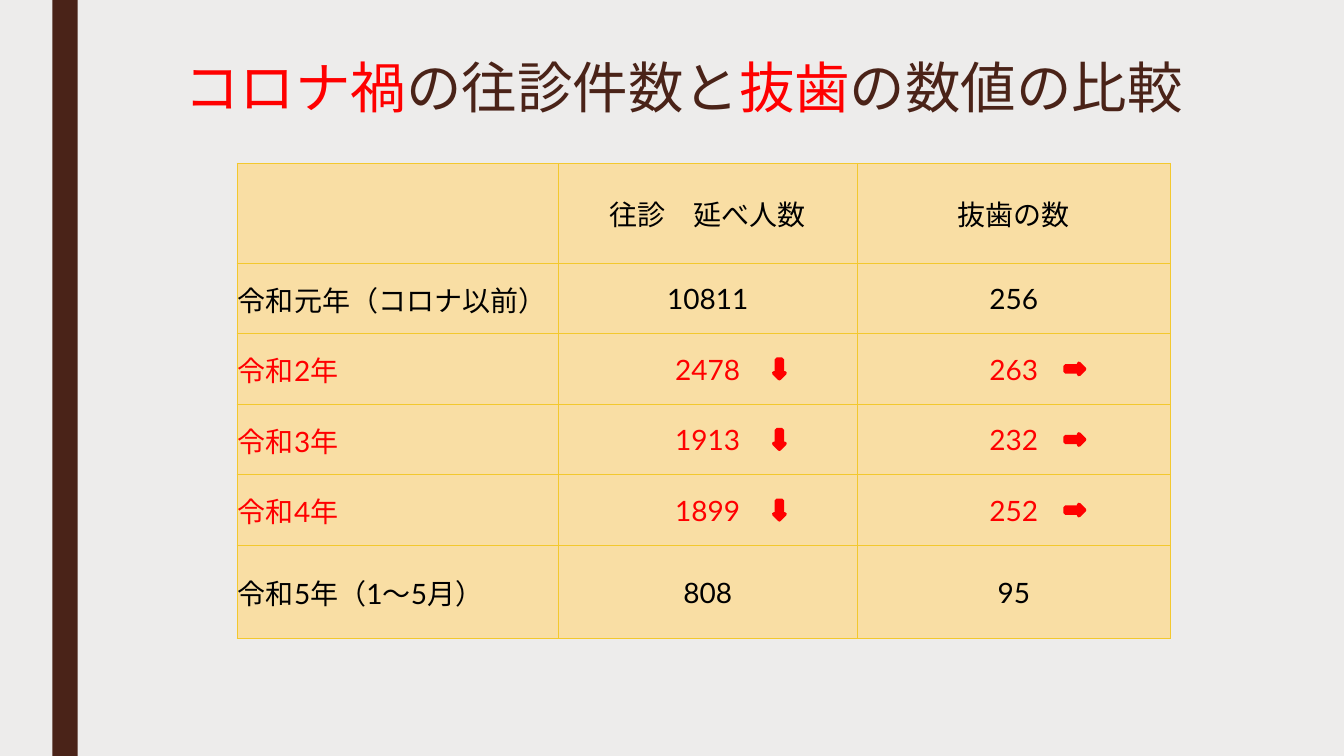
from lxml import etree
from pptx import Presentation
from pptx import util as u
from pptx.dml.color import RGBColor
from pptx.enum import lang, shapes, text
from pptx.oxml import ns

COLORS = {"back": "EDECEB", "brown": "4A2318", "red": "FF0000",
          "black": "000000", "cell": "F9DEA4", "border": "F3C82E"}
FONT = "Lato"
COLUMNS = [3.19, 2.96, 3.11]
ROWS = [0.99, 0.7, 0.7, 0.7, 0.7, 0.92]
VISITS = [
    ("", "往診　延べ人数", "抜歯の数"),
    ("令和元年（コロナ以前）", "10811", "256"),
    ("令和2年", "2478", "263"),
    ("令和3年", "1913", "232"),
    ("令和4年", "1899", "252"),
    ("令和5年（1～5月）", "808", "95"),
]
PANDEMIC_ROWS = (2, 3, 4)
# Column, distance from its left edge to the arrow's centre, rotation
ARROWS = [(1, 2.19, 0), (2, 2.16, 270)]


def color(name):
    return RGBColor.from_string(COLORS[name])


def add_text(para, words, size=20, ink="black"):
    span = para.add_run()
    span.text = words
    span.font.name = FONT
    span.font.size = u.Pt(size)
    span.font.bold = False
    span.font.color.rgb = color(ink)
    span.font.language_id = lang.MSO_LANGUAGE_ID.JAPANESE


def add_solid(page, kind, left, top, width, height, ink):
    shape = page.shapes.add_shape(kind, *map(u.Inches, (left, top, width, height)))
    shape.shadow.inherit = False
    shape.fill.solid()
    shape.fill.fore_color.rgb = color(ink)
    shape.line.fill.background()
    return shape


def set_borders(cell):
    properties = cell._tc.get_or_add_tcPr()
    for position, side in enumerate(("lnL", "lnR", "lnT", "lnB")):
        line = etree.Element(ns.qn("a:" + side), w=str(u.Pt(0.5)))
        fill = etree.SubElement(line, ns.qn("a:solidFill"))
        etree.SubElement(fill, ns.qn("a:srgbClr"), val=COLORS["border"])
        properties.insert(position, line)


def fill_title(page, left, top, width, height):
    title = page.shapes.title
    title.left, title.top, title.width, title.height = map(
        u.Inches, (left, top, width, height))
    frame = title.text_frame
    frame.word_wrap = True
    frame.auto_size = text.MSO_AUTO_SIZE.NONE
    frame.vertical_anchor = text.MSO_ANCHOR.TOP
    para = frame.paragraphs[0]
    para.alignment = text.PP_ALIGN.LEFT
    para.line_spacing = 0.89
    for words, ink in (("コロナ禍", "red"), ("の往診件数と", "brown"),
                       ("抜歯", "red"), ("の数値の比較", "brown")):
        add_text(para, words, size=39.6, ink=ink)


def fill_cell(cell, words, ink, align):
    cell.fill.solid()
    cell.fill.fore_color.rgb = color("cell")
    set_borders(cell)
    cell.vertical_anchor = text.MSO_ANCHOR.MIDDLE
    cell.margin_left = cell.margin_right = cell.margin_top = u.Inches(0.01)
    cell.margin_bottom = 0
    para = cell.text_frame.paragraphs[0]
    para.alignment = align
    if words:
        add_text(para, words, ink=ink)


def add_visits_table(page, left, top):
    frame = page.shapes.add_table(len(ROWS), len(COLUMNS), *map(
        u.Inches, (left, top, sum(COLUMNS), sum(ROWS))))
    table = frame.table
    table.first_row = table.horz_banding = False
    for column, width in zip(table.columns, COLUMNS):
        column.width = u.Inches(width)
    for r, (height, values) in enumerate(zip(ROWS, VISITS)):
        table.rows[r].height = u.Inches(height)
        ink = "red" if r in PANDEMIC_ROWS else "black"
        for c, words in enumerate(values):
            align = text.PP_ALIGN.CENTER if c else text.PP_ALIGN.LEFT
            fill_cell(table.cell(r, c), words, ink, align)


def add_trend_arrows(page, left, top, width=0.11, height=0.19):
    for c, offset, rotation in ARROWS:
        x = left + sum(COLUMNS[:c]) + offset
        for r in PANDEMIC_ROWS:
            y = top + sum(ROWS[:r]) + ROWS[r] / 2
            arrow = add_solid(page, shapes.MSO_SHAPE.DOWN_ARROW,
                              x - width / 2, y - height / 2, width, height, "red")
            arrow.rotation = rotation
            arrow.line.color.rgb = color("red")
            arrow.line.width = u.Pt(2.75)


def main():
    deck = Presentation()
    deck.slide_width, deck.slide_height = u.Inches(13.33), u.Inches(7.5)
    page = deck.slides.add_slide(deck.slide_layouts.get_by_name("Title Only"))
    page.background.fill.solid()
    page.background.fill.fore_color.rgb = color("back")

    # Side band and title
    add_solid(page, shapes.MSO_SHAPE.RECTANGLE, 0.52, 0, 0.25, 7.5, "brown")
    fill_title(page, 1.73, 0.56, 10.5, 1.33)

    # Table with trend arrows
    add_visits_table(page, 2.35, 1.62)
    add_trend_arrows(page, 2.35, 1.62)
    deck.save("out.pptx")


if __name__ == "__main__":
    main()
